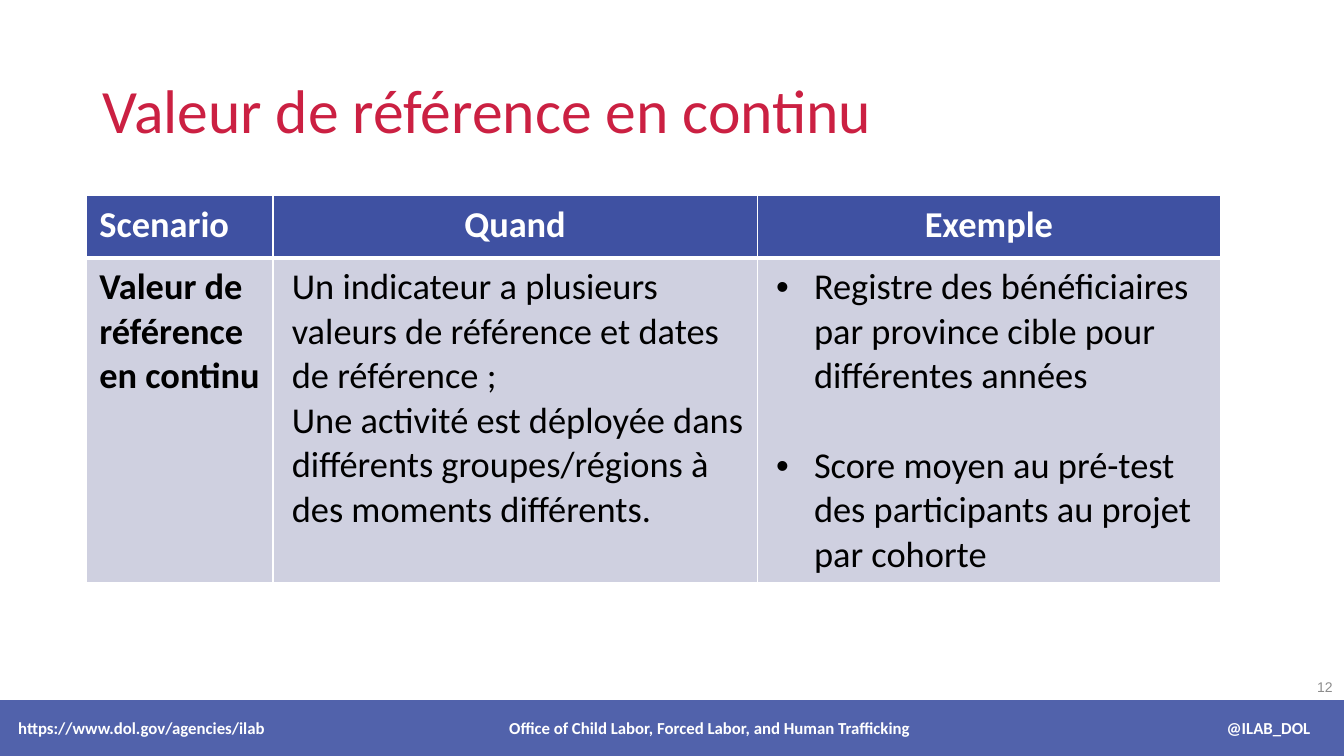
from lxml.etree import SubElement
from pptx import Presentation
from pptx.dml.color import RGBColor
from pptx.enum.shapes import MSO_SHAPE as Shape
from pptx.enum.text import MSO_ANCHOR as Anchor, MSO_AUTO_SIZE as AutoSize, PP_ALIGN as Align
from pptx.oxml.ns import qn
from pptx.util import Pt

RED = RGBColor(0xCB, 0x20, 0x42)
BLUE = RGBColor(0x3F, 0x51, 0xA2)
LAVENDER = RGBColor(0xCF, 0xD0, 0xE0)
GREY = RGBColor(0x8C, 0x8C, 0x8C)
WHITE = RGBColor(0xFF, 0xFF, 0xFF)
BLACK = RGBColor(0, 0, 0)

HEADINGS = ["Scenario", "Quand", "Exemple"]
SCENARIO = ["Valeur de référence en continu"]
WHEN = [
    "Un indicateur a plusieurs valeurs de référence et dates de référence ;",
    "Une activité est déployée dans différents groupes/régions à des moments différents.",
]
EXAMPLES = [
    "Registre des bénéficiaires par province cible pour différentes années",
    "Score moyen au pré-test des participants au projet par cohorte",
]
FOOTER = [
    "https://www.dol.gov/agencies/ilab",
    "Office of Child Labor, Forced Labor, and Human Trafficking",
    "@ILAB_DOL",
]


class SlideBuilder:
    font = "Calibri"

    def __init__(self, page):
        self.page = page

    def style(self, para, size, color, bold=False, align=Align.LEFT, font=None):
        para.alignment = align
        for span in para.runs:
            span.font.name = font or self.font
            span.font.size = Pt(size)
            span.font.bold = bold
            span.font.color.rgb = color

    def place(self, box, left, top, width, height):
        box.left, box.top, box.width, box.height = map(Pt, (left, top, width, height))

    def title(self, text, *area):
        box = self.page.shapes.title
        self.place(box, *area)
        frame = box.text_frame
        frame.text = text
        frame.auto_size = AutoSize.NONE
        frame.vertical_anchor = Anchor.MIDDLE
        frame.paragraphs[0].line_spacing = 0.9
        self.style(frame.paragraphs[0], 44, RED)

    def number(self, text, *area):
        frame = self.page.shapes.add_textbox(*map(Pt, area)).text_frame
        frame.text = text
        frame.word_wrap = True
        frame.vertical_anchor = Anchor.MIDDLE
        self.style(frame.paragraphs[0], 10, GREY, font="Arial")

    def table(self, left, top, widths, heights):
        grid = self.page.shapes.add_table(
            len(heights), len(widths), *map(Pt, (left, top, sum(widths), sum(heights)))
        ).table
        grid.horz_banding = False
        for column, width in zip(grid.columns, widths):
            column.width = Pt(width)
        for row, height in zip(grid.rows, heights):
            row.height = Pt(height)
        return grid

    def cell(self, cell, lines, fill, color, borders, bold=False, align=Align.LEFT):
        """Fill a cell; borders gives the left, right, top and bottom widths."""
        for side, width in zip("LRTB", borders):
            line = SubElement(cell._tc.get_or_add_tcPr(), qn(f"a:ln{side}"), w=str(Pt(width)))
            SubElement(SubElement(line, qn("a:solidFill")), qn("a:srgbClr"), val=str(WHITE))
        cell.fill.solid()
        cell.fill.fore_color.rgb = fill
        cell.margin_left = cell.margin_right = Pt(9)
        cell.margin_top = cell.margin_bottom = Pt(5)
        cell.text_frame.text = "\n".join(lines)
        for para in cell.text_frame.paragraphs:
            self.style(para, 26, color, bold, align)

    def indent(self, para, margin, hanging=0, bullet=None):
        properties = para._p.get_or_add_pPr()
        properties.set("marL", str(Pt(margin)))
        properties.set("indent", str(-Pt(hanging)))
        if bullet:
            SubElement(properties, qn("a:buFont"), typeface="Arial")
            SubElement(properties, qn("a:buChar"), char=bullet)

    def footer(self, parts, tabs, *area):
        """Draw the bottom band, its parts set apart by (position, alignment) tabs."""
        band = self.page.shapes.add_shape(Shape.RECTANGLE, *map(Pt, area))
        band.shadow.inherit = False
        band.line.fill.background()
        band.fill.solid()
        band.fill.fore_color.rgb = BLUE
        tint = band.fill._xPr.find(qn("a:solidFill"))[0]
        SubElement(tint, qn("a:alpha"), val="90000")
        frame = band.text_frame
        frame.margin_left = Pt(16)
        frame.vertical_anchor = Anchor.MIDDLE
        frame.text = "\t".join(parts)
        para = frame.paragraphs[0]
        self.style(para, 12, WHITE, bold=True)
        stops = SubElement(para._p.get_or_add_pPr(), qn("a:tabLst"))
        for position, align in tabs:
            SubElement(stops, qn("a:tab"), pos=str(Pt(position)), algn=align)


def main():
    deck = Presentation()
    deck.slide_width, deck.slide_height = Pt(960), Pt(540)
    builder = SlideBuilder(deck.slides.add_slide(deck.slide_layouts[5]))

    builder.number("12", 933.8, 476.6, 35.3, 28.8)
    builder.title("Valeur de référence en continu", 66, 28.8, 828, 104.4)

    grid = builder.table(62, 139.7, [133, 346, 331], [44.6, 231.8])
    for column, heading in enumerate(HEADINGS):
        align = Align.CENTER if column else Align.LEFT
        builder.cell(grid.cell(0, column), [heading], BLUE, WHITE, (1, 1, 1, 3), True, align)
    for column, lines in enumerate([SCENARIO, WHEN, EXAMPLES]):
        builder.cell(grid.cell(1, column), lines, LAVENDER, BLACK, (1, 1, 3, 1), column == 0)

    for para in grid.cell(1, 1).text_frame.paragraphs:
        builder.indent(para, 4.5)
    examples = grid.cell(1, 2).text_frame.paragraphs
    examples[1].space_before = Pt(32)
    for para in examples:
        builder.indent(para, 31.5, 27, "•")

    builder.footer(FOOTER, [(494, "ctr"), (923, "r")], -3, 500, 963, 40)
    deck.save("out.pptx")


if __name__ == "__main__":
    main()
